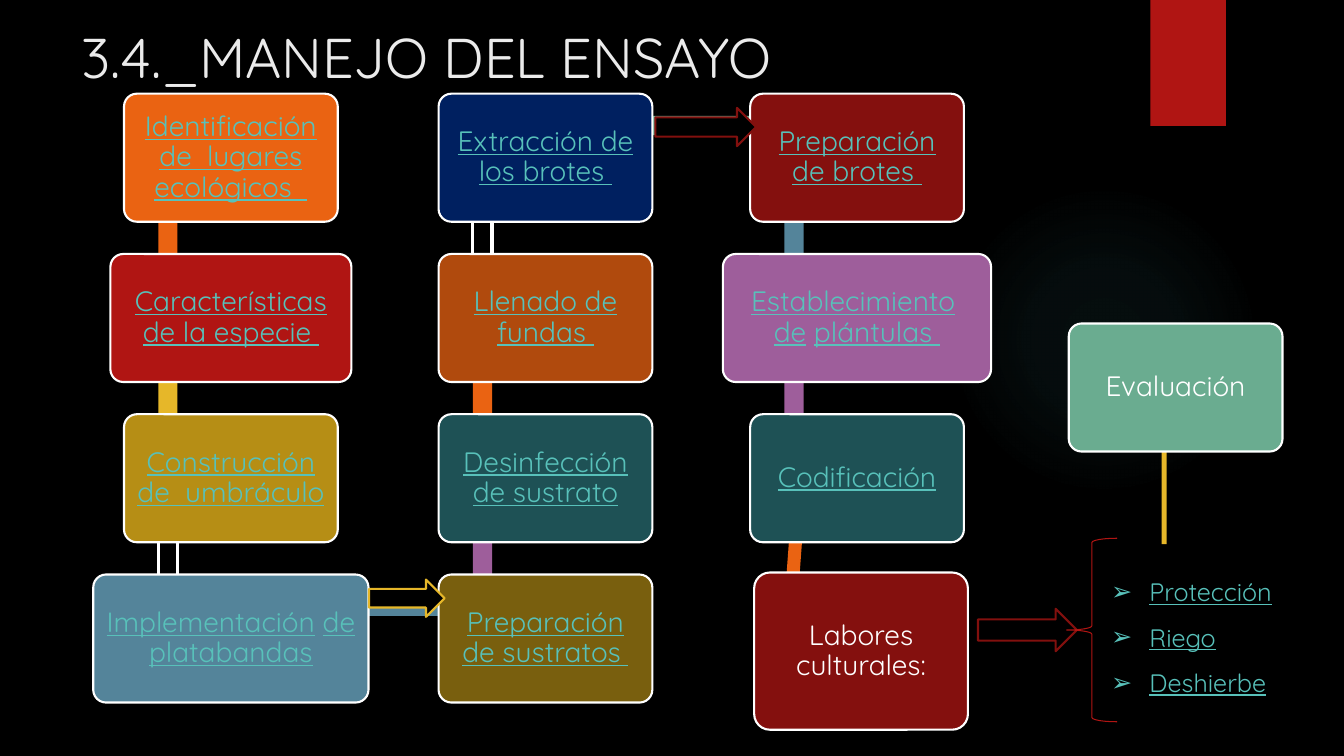
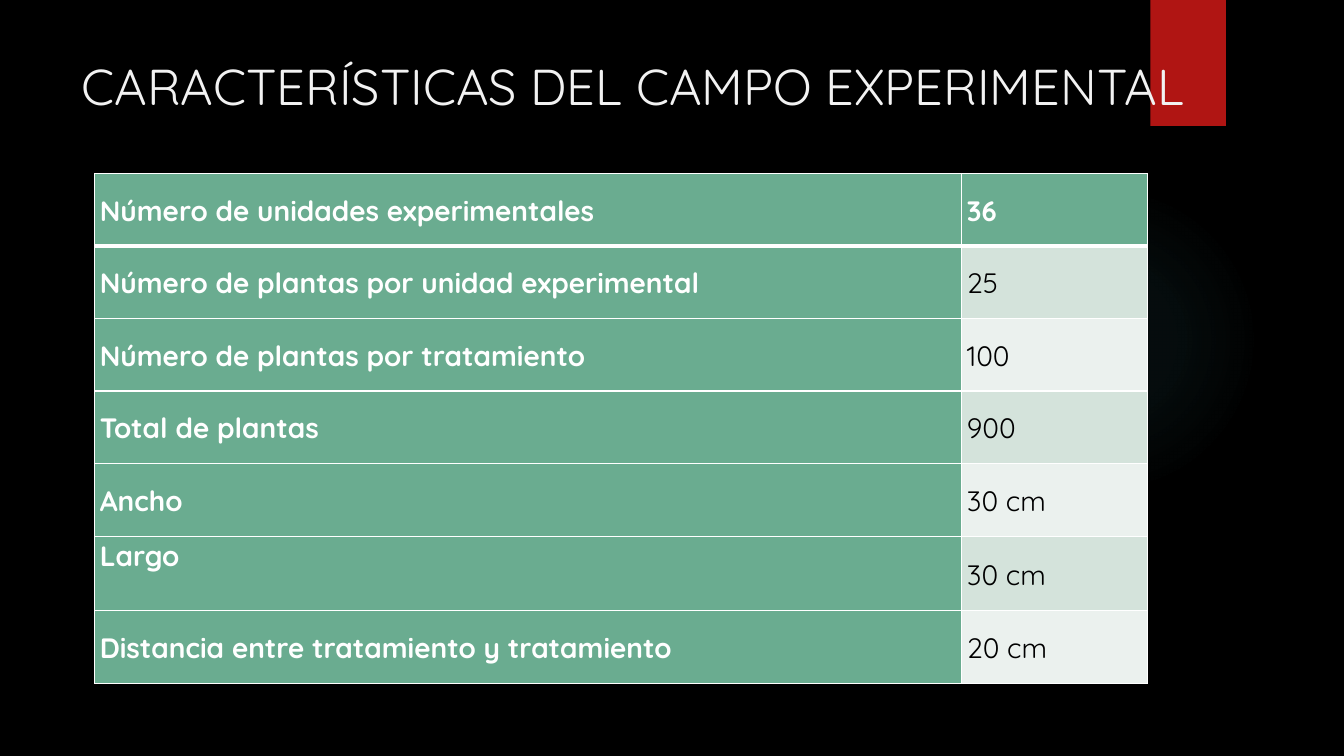
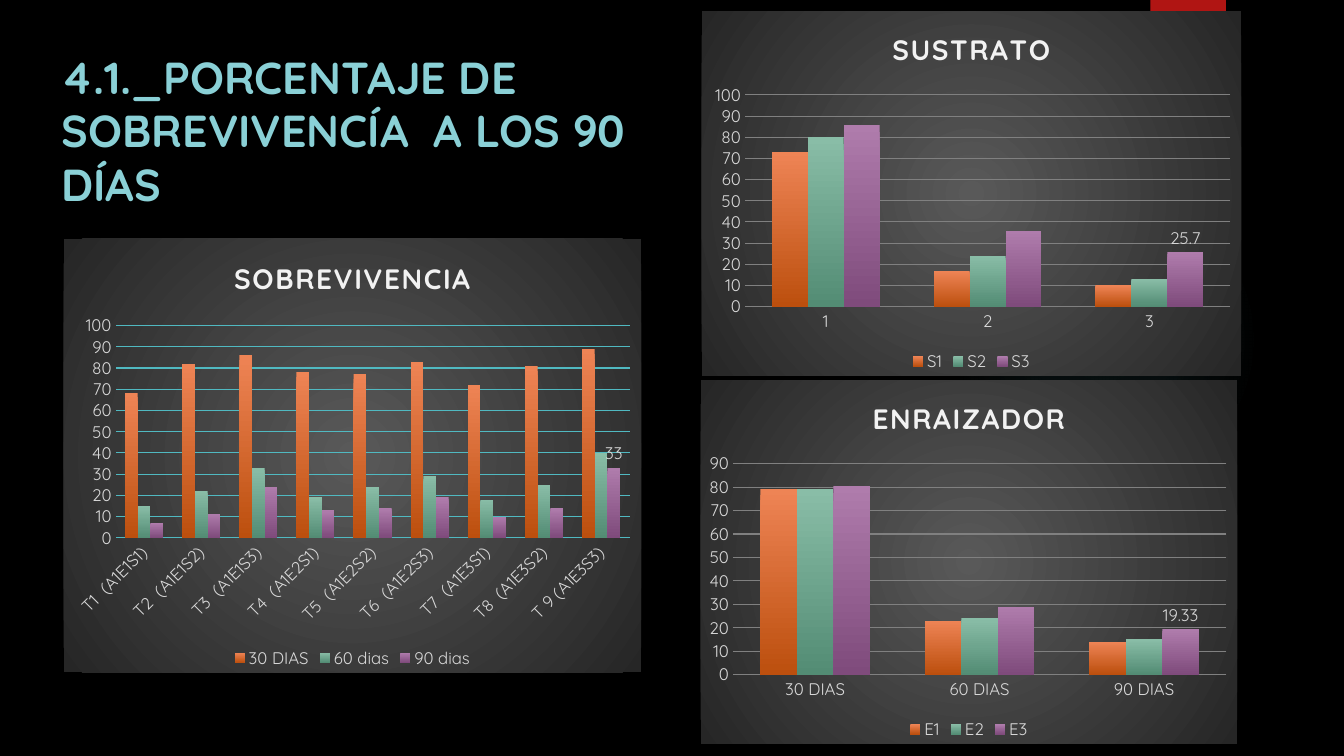
from lxml import etree
from pptx import Presentation
from pptx import util as u
from pptx.chart.data import CategoryChartData
from pptx.dml.color import RGBColor
from pptx.enum import chart as ch, shapes, text
from pptx.oxml import parse_xml
from pptx.oxml.ns import nsdecls, qn

FONT = "Quicksand"
WHITE, BLACK, LINK, GREY = "FFFFFF", "000000", "58C1BA", "D9D9D9"
RED, DARK_RED, ORANGE, YELLOW = "B01513", "84100E", "EA6312", "E6B729"
GREEN, BLUE, PURPLE, TEAL = "6AAC90", "54849A", "9E5E9B", "1E5155"
KIND = shapes.MSO_SHAPE


def rgb(code):
    return RGBColor.from_string(code)


def gradient(stops, angle=None):
    """Gradient fill from (position %, colour, opacity %); radial without an angle."""
    gs = "".join(
        f'<a:gs pos="{pos * 1000}"><a:srgbClr val="{code}">'
        f'<a:alpha val="{alpha * 1000}"/></a:srgbClr></a:gs>'
        for pos, code, alpha in stops)
    if angle is None:
        way = ('<a:path path="circle"><a:fillToRect l="50000" t="50000" '
               'r="50000" b="50000"/></a:path>')
    else:
        way = f'<a:lin ang="{angle * 60000}" scaled="0"/>'
    return parse_xml(f'<a:gradFill {nsdecls("a")} rotWithShape="1">'
                     f'<a:gsLst>{gs}</a:gsLst>{way}</a:gradFill>')


prs = Presentation()
prs.slide_width, prs.slide_height = u.Inches(13.33), u.Inches(7.5)
master = prs.slide_master
master.background.fill.solid()
master.background.fill.fore_color.rgb = rgb(BLACK)

# Slides and their titles
titles = [
    (1, ["3.4._MANEJO DEL ENSAYO"], (0.71, 0.17, 10.13, 1.1), 40, "EBEBEB", False),
    (5, ["CARACTERÍSTICAS DEL CAMPO EXPERIMENTAL"], (0.71, 0.5, 11.38, 1.22), 36,
     "F2F2F2", False),
    (5, ["4.1._PORCENTAJE DE ", "SOBREVIVENCÍA  A LOS 90", "DÍAS"],
     (0.51, 0.44, 6.28, 1.94), 32, "8AD0D6", True),
]
slides = []
for layout, lines, place, size, color, bold in titles:
    s = prs.slides.add_slide(prs.slide_layouts[layout])
    slides.append(s)
    sp = s.shapes.title
    sp.left, sp.top, sp.width, sp.height = [u.Inches(v) for v in place]
    tf = sp.text_frame
    tf.word_wrap, tf.auto_size = True, text.MSO_AUTO_SIZE.NONE
    tf.vertical_anchor = text.MSO_ANCHOR.TOP
    p = tf.paragraphs[0]
    p.alignment = text.PP_ALIGN.LEFT
    for i, line in enumerate(lines):
        if i:
            p.add_line_break()
        r = p.add_run()
        r.text = line
        r.font.name, r.font.size, r.font.bold = FONT, u.Pt(size), bold
        r.font.color.rgb = rgb(color)
flow, field, results = slides

# Glow and red band, moved to the master
for i, (kind, place) in enumerate([(KIND.OVAL, (9.41, 1.83, 3.08, 3.08)),
                                   (KIND.RECTANGLE, (11.41, 0, 0.75, 1.25))]):
    sp = flow.shapes.add_shape(kind, *[u.Inches(v) for v in place])
    sp.shadow.inherit = False
    sp.line.fill.background()
    sp.fill.solid()
    sp.fill.fore_color.rgb = rgb(RED)
    if kind == KIND.OVAL:
        solid = sp._element.spPr.find(qn("a:solidFill"))
        solid.getparent().replace(solid, gradient(
            [(0, "50B9C1", 7), (36, "50B9C1", 6), (69, "50B9C1", 0)]))
    master.shapes._spTree.insert(2 + i, sp._element)

# Slide 1: grid of steps
TOP, PITCH, BOX_W, BOX_H, BAR = 0.93, 1.59, 2.12, 1.27, 0.19
bar_x = [1.57, 4.69, 7.78]
bar_colors = [[ORANGE, YELLOW, BLACK], [BLACK, ORANGE, PURPLE], [BLUE, PURPLE]]
# In a label, the parts between bars alternate: link, plain white
columns = [
    (2.29, [("Identificación de  lugares ecológicos  ", ORANGE, BOX_W),
            ("Características de la especie ", RED, 2.39),
            ("Construcción de  umbráculo", "B68E15", BOX_W),
            ("Implementación| |de platabandas", BLUE, 2.73)]),
    (5.41, [("Extracción de los brotes ", "002060", BOX_W),
            ("Llenado de fundas ", "B04A0D", BOX_W),
            ("Desinfección de sustrato", TEAL, BOX_W),
            ("Preparación| |de sustratos ", "795F0E", BOX_W)]),
    (8.5, [("Preparación de brotes ", DARK_RED, BOX_W),
           ("Establecimiento| | de| |plántulas ", PURPLE, 2.66),
           ("Codificación", TEAL, BOX_W)]),
]

# Each part: kind, place, fill, line, line width, rotation, label
parts = [(KIND.RECTANGLE, (x, 1.24 + PITCH * row, BAR, PITCH), color,
          WHITE if color == BLACK else None, 2.25, 0, "")
         for x, colors in zip(bar_x, bar_colors) for row, color in enumerate(colors)]
parts += [
    (KIND.RECTANGLE, (1.67, 5.92, 3.11, BAR), BLUE, None, 0, 0, ""),
    (KIND.RECTANGLE, (4.78, 1.15, 3.08, BAR), GREEN, None, 0, 0, ""),
    (KIND.RECTANGLE, (7.82, 4.72, 0.13, 1.45), ORANGE, None, 0, 4.2, ""),
    (KIND.RECTANGLE, (11.52, 4.46, 0.05, 0.94), YELLOW, None, 0, 0, ""),
]
parts += [(KIND.ROUNDED_RECTANGLE, (mid - w / 2, TOP + PITCH * row, w, BOX_H), color,
           WHITE, 1.5, 0, label)
          for mid, steps in columns for row, (label, color, w) in enumerate(steps)]
parts += [
    (KIND.ROUNDED_RECTANGLE, (7.48, 5.68, BOX_W, 1.56), DARK_RED, WHITE, 1.5, 0,
     "|Labores culturales:"),
    (KIND.ROUNDED_RECTANGLE, (10.6, 3.21, BOX_W, BOX_H), GREEN, WHITE, 1.5, 0,
     "|Evaluación"),
    (KIND.RIGHT_ARROW, (3.66, 5.75, 0.75, 0.37), BLACK, YELLOW, 1.5, 0, ""),
    (KIND.RIGHT_ARROW, (6.5, 1.07, 1, 0.38), BLACK, "82100E", 1.5, 0, ""),
    (KIND.RIGHT_ARROW, (9.7, 6.04, 0.98, 0.42), BLACK, "82100E", 1.5, 0, ""),
    (KIND.LEFT_BRACE, (10.58, 5.34, 0.5, 1.82), None, RED, 0.75, 0, ""),
]
for kind, place, fill, line, width, rotation, label in parts:
    sp = flow.shapes.add_shape(kind, *[u.Inches(v) for v in place])
    sp.shadow.inherit = False
    sp.rotation = rotation
    if fill:
        sp.fill.solid()
        sp.fill.fore_color.rgb = rgb(fill)
    else:
        sp.fill.background()
    if line:
        sp.line.color.rgb = rgb(line)
        sp.line.width = u.Pt(width)
    else:
        sp.line.fill.background()
    if not label:
        continue
    sp.adjustments[0] = 0.1
    tf = sp.text_frame
    tf.word_wrap, tf.vertical_anchor = True, text.MSO_ANCHOR.MIDDLE
    tf.margin_left = tf.margin_right = tf.margin_top = tf.margin_bottom = u.Inches(0.08)
    p = tf.paragraphs[0]
    p.alignment, p.line_spacing = text.PP_ALIGN.CENTER, 0.9
    for i, words in enumerate(label.split("|")):
        if words:
            r = p.add_run()
            r.text = words
            r.font.name, r.font.size, r.font.underline = FONT, u.Pt(20), i % 2 == 0
            r.font.color.rgb = rgb(WHITE if i % 2 else LINK)

# Slide 1: list of cultural tasks
sp = flow.placeholders[1]
sp.left, sp.top, sp.width, sp.height = [u.Inches(v) for v in (10.92, 5.52, 2.03, 1.46)]
tf = sp.text_frame
tf.word_wrap, tf.auto_size = True, text.MSO_AUTO_SIZE.NONE
for i, task in enumerate(["Protección", "Riego", "Deshierbe"]):
    p = tf.add_paragraph() if i else tf.paragraphs[0]
    pPr = p._p.get_or_add_pPr()
    pPr.set("marL", str(u.Inches(0.38)))
    pPr.set("indent", str(-u.Inches(0.38)))
    etree.SubElement(pPr, qn("a:buFont")).set("typeface", "Wingdings")
    etree.SubElement(pPr, qn("a:buChar")).set("char", "➢")
    pPr.find(qn("a:buFont")).set("typeface", "Arial")
    p.alignment, p.line_spacing = text.PP_ALIGN.JUSTIFY, 1.5
    p.space_before = u.Pt(0)
    r = p.add_run()
    r.text = task
    r.font.name, r.font.size, r.font.underline = FONT, u.Pt(18), True
    r.font.color.rgb = rgb(LINK)

# Slide 2: table
rows = [
    ("Número de unidades experimentales", "36"),
    ("Número de plantas por unidad experimental", "25"),
    ("Número de plantas por tratamiento", "100"),
    ("Total de plantas", "900"),
    ("Ancho", "30 cm"),
    ("Largo", "30 cm"),
    ("Distancia entre tratamiento y tratamiento", "20 cm"),
]
table = field.shapes.add_table(len(rows), 2, *[
    u.Inches(v) for v in (0.94, 1.72, 10.44, 5.03)]).table
table.columns[0].width, table.columns[1].width = u.Inches(8.6), u.Inches(1.84)
for i, row in enumerate(rows):
    table.rows[i].height = u.Inches(0.74 if row[0] == "Largo" else 0.72)
    for j, words in enumerate(row):
        cell = table.cell(i, j)
        strong = i == 0 or j == 0
        for side in "LRTB":
            heavy = (i, side) in [(0, "B"), (1, "T")]
            cell._tc.get_or_add_tcPr().append(parse_xml(
                f'<a:ln{side} {nsdecls("a")} w="{u.Pt(3 if heavy else 1)}"><a:solidFill>'
                f'<a:srgbClr val="{WHITE}"/></a:solidFill></a:ln{side}>'))
        cell.fill.solid()
        cell.fill.fore_color.rgb = rgb(GREEN if strong else ("EBF1EE", "D4E3DB")[i % 2])
        cell.margin_left = cell.margin_right = u.Inches(0.05)
        cell.margin_top = cell.margin_bottom = 0
        cell.vertical_anchor = (text.MSO_ANCHOR.TOP if words == "Largo"
                                else text.MSO_ANCHOR.MIDDLE)
        p = cell.text_frame.paragraphs[0]
        p.line_spacing = 1.07
        r = p.add_run()
        r.text = words
        r.font.name, r.font.size, r.font.bold = FONT, u.Pt(20), strong
        r.font.color.rgb = rgb(WHITE if strong else BLACK)

# Slide 3: column charts; plot is the share of the chart taken by the plot area
treatments = ["T1  (A1E1S1)", "T2  (A1E1S2)", "T3  (A1E1S3)", "T4  (A1E2S1)",
              "T5  (A1E2S2)", "T6  (A1E2S3)", "T7  (A1E3S1)", "T8  (A1E3S2)",
              "T 9 (A1E3S3)"]
charts = [
    ("SOBREVIVENCIA", (0.63, 2.37, 5.73, 4.3), (0.09, 0.2, 0.89, 0.49), "50B9C1", 100,
     treatments,
     [("30 DIAS", (68, 82, 86, 78, 77, 83, 72, 81, 89)),
      ("60 dias", (15, 22, 33, 19, 24, 29, 18, 25, 40)),
      ("90 dias", (7, 11, 24, 13, 14, 19, 10, 14, 33))]),
    ("SUSTRATO", (6.96, 0.11, 5.35, 3.62), (0.08, 0.23, 0.9, 0.58), "808080", 100,
     ["1", "2", "3"],
     [("S1", (73, 17, 10)), ("S2", (80, 24, 13)), ("S3", (86, 35.7, 25.7))]),
    ("ENRAIZADOR", (6.95, 3.77, 5.32, 3.61), (0.06, 0.23, 0.92, 0.58), "808080", 90,
     ["30 DIAS", "60 DIAS", "90 DIAS"],
     [("E1", (79, 23, 14)), ("E2", (79, 24, 15)), ("E3", (80.67, 29, 19.33))]),
]
series_colors = [("EE8455", "BC4F0E"), ("89BDA7", "538C74"), ("AF7CAC", "7F4B7C")]
for title, place, plot, grid, top, cats, series in charts:
    data = CategoryChartData()
    data.categories = cats
    for name, values in series:
        data.add_series(name, values)
    chart = results.shapes.add_chart(ch.XL_CHART_TYPE.COLUMN_CLUSTERED,
                                     *[u.Inches(v) for v in place], data).chart
    chart.font.name, chart.font.size = FONT, u.Pt(10)
    chart.font.color.rgb = rgb(WHITE)

    # Background and plot area
    back = parse_xml(f'<c:spPr {nsdecls("c", "a")}><a:ln><a:noFill/></a:ln></c:spPr>')
    back.insert(0, gradient([(0, "595959", 100), (100, "262626", 100)]))
    chart._chartSpace.chart.addnext(back)
    area = chart._chartSpace.chart.plotArea
    for old in area.findall(qn("c:layout")):
        area.remove(old)
    sizes = "".join(f'<c:{k} val="{v}"/>' for k, v in zip("xywh", plot))
    area.insert(0, parse_xml(
        f'<c:layout {nsdecls("c")}><c:manualLayout><c:layoutTarget val="inner"/>'
        f'<c:xMode val="edge"/><c:yMode val="edge"/>{sizes}</c:manualLayout></c:layout>'))

    # Title and legend
    chart.has_title = True
    r = chart.chart_title.text_frame.paragraphs[0].add_run()
    r.text = title
    r.font.name, r.font.size, r.font.bold = FONT, u.Pt(20), True
    r.font.color.rgb = rgb("F2F2F2")
    r.font._element.set("spc", "100")
    chart.chart_title.include_in_layout = False
    chart.has_legend = True
    chart.legend.position = ch.XL_LEGEND_POSITION.BOTTOM
    chart.legend.include_in_layout = False

    # Axes
    cat_axis, val_axis = chart.category_axis, chart.value_axis
    for axis in (cat_axis, val_axis):
        axis.major_tick_mark = axis.minor_tick_mark = ch.XL_TICK_MARK.NONE
        axis.format.line.fill.background()
    val_axis.minimum_scale, val_axis.maximum_scale, val_axis.major_unit = 0, top, 10
    val_axis.major_gridlines.format.line.color.rgb = rgb(grid)
    val_axis.major_gridlines.format.line.width = u.Pt(0.75)

    # Columns, with a value on the last one
    bars = chart.plots[0]
    bars.gap_width, bars.overlap, bars.vary_by_categories = 150, 0, False
    for ser, (light, dark) in zip(bars.series, series_colors):
        ser.format.fill.solid()
        solid = ser._element.spPr.find(qn("a:solidFill"))
        solid.getparent().replace(solid, gradient([(0, light, 100), (100, dark, 100)], 90))
    label = bars.series[2].points[len(cats) - 1].data_label
    label.position = ch.XL_LABEL_POSITION.OUTSIDE_END
    for font in (cat_axis.tick_labels.font, val_axis.tick_labels.font,
                 chart.legend.font, label.font):
        font.name, font.size = FONT, u.Pt(12)
        font.color.rgb = rgb(GREY)
    if cats == treatments:
        body = cat_axis._element.find(qn("c:txPr")).find(qn("a:bodyPr"))
        body.set("rot", str(-45 * 60000))
        body.set("vert", "horz")

prs.save("out.pptx")
